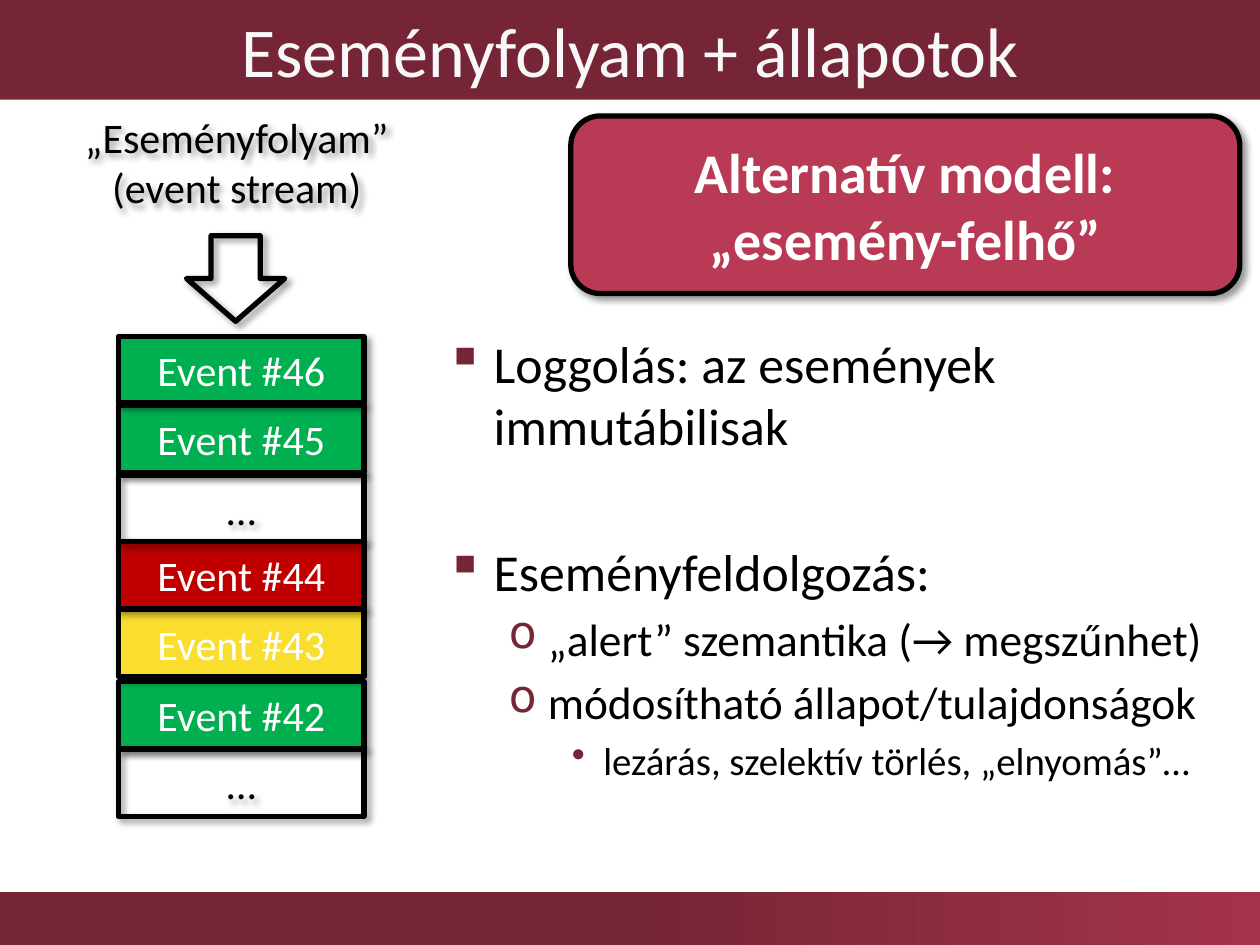
from lxml.etree import SubElement as Sub
from pptx import Presentation
from pptx.dml.color import RGBColor as Rgb
from pptx.enum.shapes import MSO_SHAPE as Shp
from pptx.enum.text import MSO_ANCHOR as Anc, PP_ALIGN as Al
from pptx.oxml.ns import qn
from pptx.util import Inches, Pt

COL = {
    "wine": "762536", "rose": "A3334B", "red": "B83A55", "pale": "F8F8F8",
    "white": "FFFFFF", "black": "000000", "green": "00B050",
    "gold": "F9DD2F", "alarm": "C00000",
}


def rgb(name):
    return Rgb.from_string(COL[name])


def put_text(shape, lines, size=24, color="black", bold=False):
    """Write centred lines into the middle of a shape."""
    frame = shape.text_frame
    frame.word_wrap = True
    frame.vertical_anchor = Anc.MIDDLE
    for i, line in enumerate(lines):
        para = frame.paragraphs[0] if i == 0 else frame.add_paragraph()
        para.alignment = Al.CENTER
        add_run(para, line, size, color, bold)


def add_run(para, text, size, color="black", bold=False):
    run = para.add_run()
    run.text = text
    font = run.font
    font.name, font.size, font.bold = "Calibri", Pt(size), bold
    font.color.rgb = rgb(color)


class Deck:
    font_step = {0: (29.6, 0.38, 0.38, "▪"),
                 1: (25.9, 0.81, 0.31, "o"),
                 2: (22.2, 1.25, 0.25, "•")}

    def __init__(self):
        self.prs = Presentation()
        self.prs.slide_width, self.prs.slide_height = Inches(10), Inches(7.5)
        self.slide = self.prs.slides.add_slide(self.prs.slide_layouts[6])

    def shade(self, shape):
        """Give a shape the soft shadow of this slide."""
        shape.shadow.inherit = False
        fx = shape._element.spPr.find(qn("a:effectLst"))
        outer = Sub(fx, qn("a:outerShdw"), blurRad=str(Pt(4)),
                    dist=str(Pt(3)), dir="2700000", algn="tl",
                    rotWithShape="0")
        clr = Sub(outer, qn("a:srgbClr"), val=COL["black"])
        Sub(clr, qn("a:alpha"), val="40000")

    def box(self, at, kind=Shp.RECTANGLE, fill=None, edge=True):
        shape = self.slide.shapes.add_shape(kind, *map(Inches, at))
        shape.shadow.inherit = False
        if fill:
            shape.fill.solid()
            shape.fill.fore_color.rgb = rgb(fill)
        else:
            shape.fill.background()
        if edge:
            shape.line.color.rgb = rgb("black")
            shape.line.width = Pt(3)
            self.shade(shape)
        else:
            shape.line.fill.background()
        return shape

    def label(self, at):
        return self.slide.shapes.add_textbox(*map(Inches, at))

    def band(self, at):
        fill = self.box(at, edge=False).fill
        fill.gradient()
        fill.gradient_angle = 0
        for stop, (pos, name) in zip(fill.gradient_stops,
                                     [(0.5, "wine"), (1, "rose")]):
            stop.position = pos
            stop.color.rgb = rgb(name)

    def bullets(self, at, items):
        frame = self.label(at).text_frame
        frame.word_wrap = True
        for i, (level, gap, text) in enumerate(items):
            para = frame.paragraphs[0] if i == 0 else frame.add_paragraph()
            size, left, hang, mark = self.font_step[level]
            para.level = level
            para.space_before = Pt(gap)
            ppr = para._p.get_or_add_pPr()
            ppr.set("marL", str(Inches(left)))
            ppr.set("indent", str(-Inches(hang)))
            Sub(Sub(ppr, qn("a:buClr")), qn("a:srgbClr"), val=COL["wine"])
            Sub(ppr, qn("a:buChar"), char=mark)
            add_run(para, text, size)


def main():
    deck = Deck()

    # Footer band and title bar
    deck.band((0, 7.08, 10, 0.42))
    title = deck.box((0, 0, 10, 0.79), fill="wine", edge=False)
    put_text(title, ["Eseményfolyam + állapotok"], size=40, color="pale")

    # Stack of events, oldest first
    events = [
        (5.41, "Event #42", "green"), (4.84, "Event #43", "gold"),
        (4.3, "Event #44", "alarm"), (3.77, "…", None),
        (3.22, "Event #45", "green"), (2.67, "Event #46", "green"),
        (5.95, "…", None),
    ]
    for top, name, fill in events:
        cell = deck.box((0.94, top, 1.95, 0.53), fill=fill)
        put_text(cell, [name], color="white" if fill else "black")

    # Stream arrow and its label
    arrow = deck.box((1.48, 1.87, 0.78, 0.68), kind=Shp.UP_ARROW)
    arrow.rotation = 180
    stream = deck.label((0.55, 1.02, 2.66, 0.53))
    put_text(stream, ["„Eseményfolyam”", "(event stream)"])
    deck.shade(stream)

    # Bullets: level, space before, text
    deck.bullets((3.44, 2.58, 6.33, 3.67), [
        (0, 0, "Loggolás: az események immutábilisak"),
        (0, 48, "Eseményfeldolgozás:"),
        (1, 5.2, "„alert” szemantika (→ megszűnhet)"),
        (1, 5.2, "módosítható állapot/tulajdonságok"),
        (2, 4.4, "lezárás, szelektív törlés, „elnyomás”…"),
    ])

    # Callout
    note = deck.box((4.53, 0.92, 5.31, 1.41), kind=Shp.ROUNDED_RECTANGLE,
                    fill="red")
    put_text(note, ["Alternatív modell:", "„esemény-felhő”"], size=32,
             color="white", bold=True)

    deck.prs.save("out.pptx")


if __name__ == "__main__":
    main()
